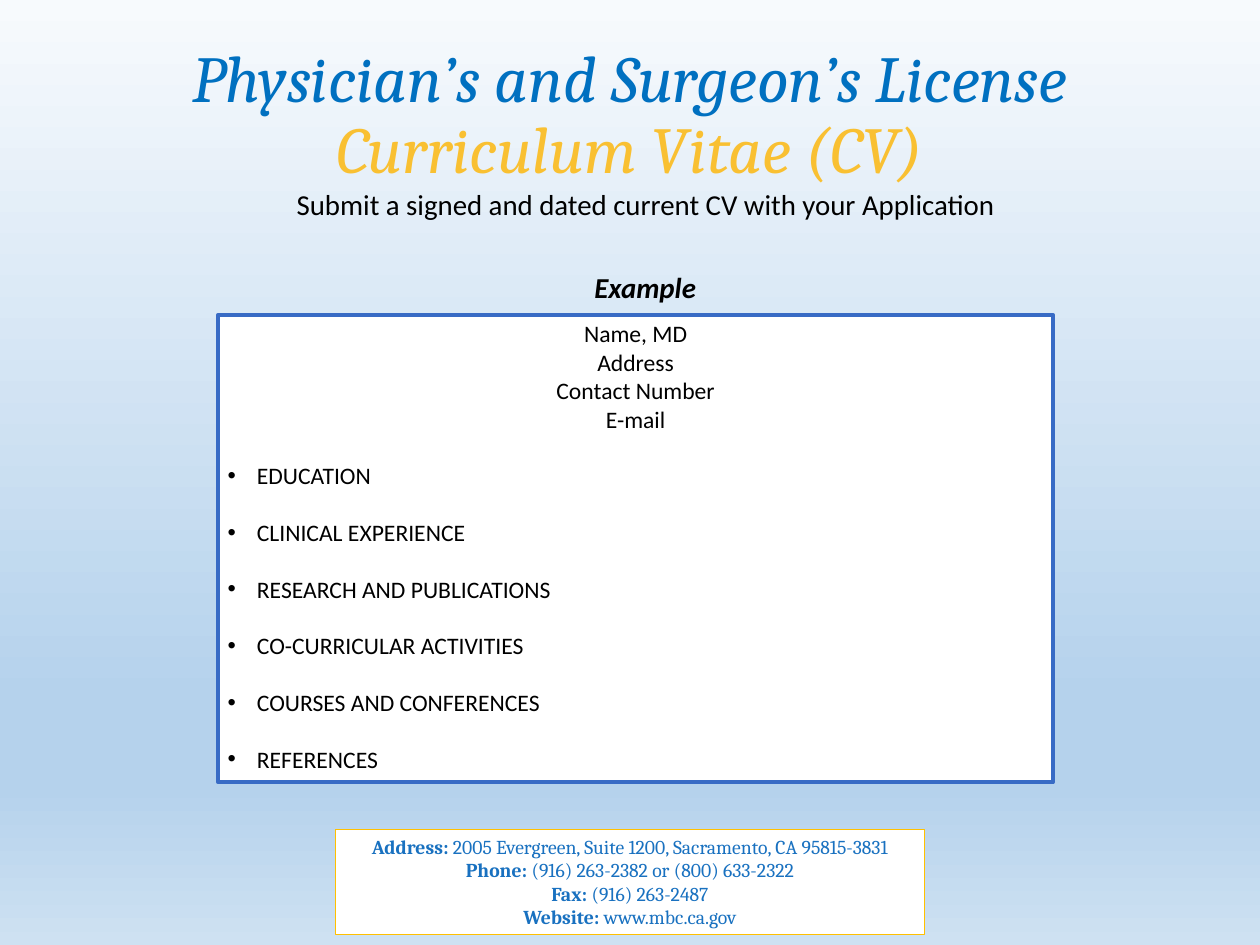
from lxml import etree
from pptx import Presentation
from pptx import util as u
from pptx.dml.color import RGBColor
from pptx.enum import shapes, text
from pptx.oxml.ns import qn

WIDTH, HEIGHT = 13.33, 10
COLORS = {
    "title": "0070C0", "subtitle": "F9C032", "body": "000000",
    "contact": "1971C0", "contact_border": "FFC000",
    "cv_border": "386BC5", "paper": "FFFFFF",
}
BACKGROUND_STOPS = [(0, "F7FAFD"), (74, "B5D2EC"), (83, "B5D2EC"), (100, "CEE1F2")]

TITLE = [("Physician’s and Surgeon’s License", "title"),
         ("Curriculum Vitae (CV)", "subtitle")]
INSTRUCTION = "Submit a signed and dated current CV with your Application"
EXAMPLE = "Example"
CV_HEADER = ["Name, MD", "Address", "Contact Number", "E-mail"]
CV_SECTIONS = ["EDUCATION", "CLINICAL EXPERIENCE", "RESEARCH AND PUBLICATIONS",
               "CO-CURRICULAR ACTIVITIES", "COURSES AND CONFERENCES", "REFERENCES"]
CONTACT = [
    ("Address:", " 2005 Evergreen, Suite 1200, Sacramento, CA 95815-3831"),
    ("Phone:", " (916) 263-2382 or (800) 633-2322"),
    ("Fax:", " (916) 263-2487"),
    ("Website:", " www.mbc.ca.gov"),
]

# Left, top, width, height in inches
AREAS = {
    "title": (0, 0.44, WIDTH, 1.86),
    "instruction": (3.04, 1.93, 7.66, 0.47),
    "example": (6.19, 2.8, 1.29, 0.47),
    "cv": (2.31, 3.33, 8.83, 4.95),
    "contact": (3.55, 8.78, 6.23, 1.11),
}
SECTION_GAP = 21.6
BULLET_INDENT = 0.31


def color(name):
    return RGBColor.from_string(COLORS[name])


def paint_background(slide):
    fill = slide.background.fill
    fill.gradient()
    fill.gradient_angle = 270
    stops = slide.element.find(".//" + qn("a:gsLst"))
    for stop in list(stops):
        stops.remove(stop)
    for percent, value in BACKGROUND_STOPS:
        stop = etree.SubElement(stops, qn("a:gs"), pos=str(percent * 1000))
        etree.SubElement(stop, qn("a:srgbClr"), val=value)


def add_box(slide, area, border=None, border_width=0, wrap=True):
    """Add a text box, or a white bordered rectangle, and return its text frame."""
    position = [u.Inches(length) for length in AREAS[area]]
    if border:
        shape = slide.shapes.add_shape(shapes.MSO_SHAPE.RECTANGLE, *position)
        shape.shadow.inherit = False
        shape.fill.solid()
        shape.fill.fore_color.rgb = color("paper")
        shape.line.color.rgb = color(border)
        shape.line.width = u.Pt(border_width)
    else:
        shape = slide.shapes.add_textbox(*position)
    frame = shape.text_frame
    frame.word_wrap = wrap
    frame.vertical_anchor = text.MSO_ANCHOR.TOP
    return frame


def add_line(frame, runs, size, font="Calibri", ink="body", centered=True,
             bold=None, italic=None):
    """Fill the empty first paragraph, or append one, with the given runs."""
    first = frame.paragraphs[0]
    paragraph = frame.add_paragraph() if first.runs else first
    paragraph.alignment = text.PP_ALIGN.CENTER if centered else text.PP_ALIGN.LEFT
    paragraph.font.name = font
    paragraph.font.size = u.Pt(size)
    paragraph.font.color.rgb = color(ink)
    paragraph.font.bold = bold
    paragraph.font.italic = italic
    for words in runs:
        paragraph.add_run().text = words
    return paragraph


def add_bullet(paragraph):
    properties = paragraph._p.get_or_add_pPr()
    indent = u.Inches(BULLET_INDENT)
    properties.set("marL", str(indent))
    properties.set("indent", str(-indent))
    bullet_font = etree.Element(qn("a:buFont"), typeface="Arial")
    bullet = etree.Element(qn("a:buChar"), char="•")
    defaults = properties.find(qn("a:defRPr"))
    defaults.addprevious(bullet_font)
    defaults.addprevious(bullet)


def main():
    presentation = Presentation()
    presentation.slide_width = u.Inches(WIDTH)
    presentation.slide_height = u.Inches(HEIGHT)
    slide = presentation.slides.add_slide(presentation.slide_layouts[6])
    paint_background(slide)

    title = add_box(slide, "title")
    for words, ink in TITLE:
        add_line(title, [words], 50, "Cambria", ink, italic=True).line_spacing = 0.9

    instruction = add_box(slide, "instruction", wrap=False)
    add_line(instruction, [INSTRUCTION], 22, centered=False)

    contact = add_box(slide, "contact", "contact_border", 0.75, wrap=False)
    for entry in CONTACT:
        line = add_line(contact, entry, 15, "Cambria", "contact")
        line.runs[0].font.bold = True

    cv = add_box(slide, "cv", "cv_border", 3)
    for words in CV_HEADER:
        add_line(cv, [words], 18)
    for words in CV_SECTIONS:
        section = add_line(cv, [words], 18, centered=False)
        section.space_before = u.Pt(SECTION_GAP)
        add_bullet(section)

    example = add_box(slide, "example", wrap=False)
    add_line(example, [EXAMPLE], 22, centered=False, bold=True, italic=True)

    presentation.save("out.pptx")


if __name__ == "__main__":
    main()
